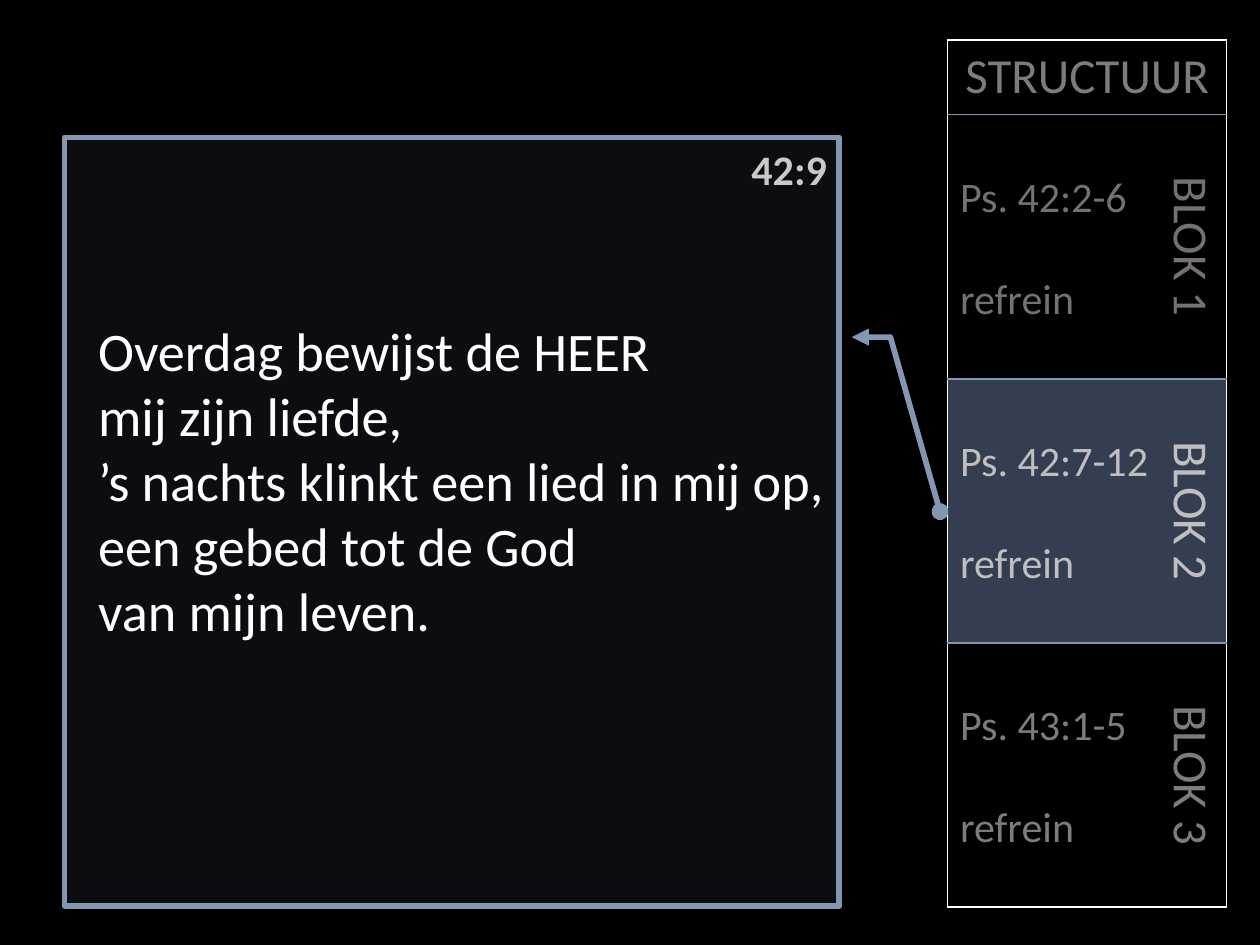
from lxml import etree
from pptx import Presentation
from pptx.dml.color import RGBColor
from pptx.enum.shapes import MSO_SHAPE
from pptx.enum.text import MSO_ANCHOR, MSO_AUTO_SIZE, PP_ALIGN
from pptx.oxml.ns import qn
from pptx.util import Cm, Pt

CALLOUT = MSO_SHAPE.LINE_CALLOUT_2
MIDDLE = MSO_ANCHOR.MIDDLE
GROW = MSO_AUTO_SIZE.SHAPE_TO_FIT_TEXT
LEFT, RIGHT, CENTER = PP_ALIGN.LEFT, PP_ALIGN.RIGHT, PP_ALIGN.CENTER

FONT = "Calibri"
BLUE, WHITE, BLACK = "8497B0", "FFFFFF", "000000"
BLOCKS = [
    ("Ps. 42:2-6", "BLOK 1", "767171", None),
    ("Ps. 42:7-12", "BLOK 2", "BFBFBF", "333F50"),
    ("Ps. 43:1-5", "BLOK 3", "7C7C7C", None),
]
VERSE = [
    "Overdag bewijst de HEER",
    "mij zijn liefde,",
    "’s nachts klinkt een lied in mij op,",
    "een gebed tot de God",
    "van mijn leven.",
]


def paint(fmt, color):
    """Give a fill a solid colour, or none."""
    if color is None:
        fmt.background()
    else:
        fmt.solid()
        fmt.fore_color.rgb = RGBColor.from_string(color)


def write(frame, lines, size, color, align=LEFT, bold=False, gap=0):
    """Write each line as a paragraph, with a gap between them."""
    for i, line in enumerate(lines):
        para = frame.add_paragraph() if i else frame.paragraphs[0]
        para.alignment = align
        if i and gap:
            para.space_before = Pt(gap)
        run = para.add_run()
        run.text = line
        run.font.name = FONT
        run.font.size = Pt(size)
        run.font.bold = bold
        paint(run.font.fill, color)


def edge(cell, **sides):
    """Draw the four borders of a cell; sides not named stay bare."""
    props = cell._tc.get_or_add_tcPr()
    for side in "LRTB":
        color = sides.get(side)
        line = etree.SubElement(props, qn(f"a:ln{side}"), w=str(Pt(1)))
        if color:
            fill = etree.SubElement(line, qn("a:solidFill"))
            etree.SubElement(fill, qn("a:srgbClr"), val=color)
        else:
            etree.SubElement(line, qn("a:noFill"))


def outline(slide, x, y, w, h):
    """Place the table that lists the blocks of the psalms."""
    head, side = 1.5, 1.13
    frame = slide.shapes.add_table(
        len(BLOCKS) + 1, 2, Cm(x), Cm(y), Cm(w), Cm(h))
    table = frame.table
    table.first_row = table.horz_banding = False
    table.columns[0].width, table.columns[1].width = Cm(w - side), Cm(side)
    for i, row in enumerate(table.rows):
        row.height = Cm((h - head) / len(BLOCKS) if i else head)

    title = table.cell(0, 0)
    title.merge(table.cell(0, 1))
    write(title.text_frame, ["STRUCTUUR"], 28, "7C7C7C", CENTER)
    edge(title, L=WHITE, R=WHITE, T=WHITE, B=BLUE)
    edge(table.cell(0, 1), R=WHITE, T=WHITE, B=BLUE)
    paint(title.fill, None)
    paint(table.cell(0, 1).fill, None)

    for i, (psalm, name, color, back) in enumerate(BLOCKS, 1):
        base = WHITE if i == len(BLOCKS) else BLUE
        part, block = table.cell(i, 0), table.cell(i, 1)
        part.margin_top = Cm(1.16)
        write(part.text_frame, [psalm, "refrein"], 24, color, gap=29.3)
        write(block.text_frame, [name], 28, color, CENTER)
        block.vertical_anchor = MIDDLE
        block._tc.get_or_add_tcPr().set("vert", "vert")
        edge(part, L=WHITE, T=BLUE, B=base)
        edge(block, R=WHITE, T=BLUE, B=base)
        paint(part.fill, back)
        paint(block.fill, back)


def label(slide, x, y, w, h, lines, size, color, **style):
    """Place a text box that grows with its text."""
    frame = slide.shapes.add_textbox(Cm(x), Cm(y), Cm(w), Cm(h)).text_frame
    frame.word_wrap = True
    frame.auto_size = GROW
    write(frame, lines, size, color, **style)


def panel(slide, x, y, w, h):
    """Place the callout with the verse and its number."""
    box = slide.shapes.add_shape(CALLOUT, Cm(x), Cm(y), Cm(w), Cm(h))
    box.shadow.inherit = False
    for i, value in enumerate([0.26, 1.016, 0.26, 1.066, 0.487, 1.13]):
        box.adjustments[i] = value
    paint(box.fill, "222A35")
    tint = box.fill._xPr.find(qn("a:solidFill"))[0]
    etree.SubElement(tint, qn("a:alpha"), val="33000")
    paint(box.line.fill, BLUE)
    box.line.width = Pt(3.25)
    line = box.line._get_or_add_ln()
    etree.SubElement(line, qn("a:headEnd"), type="triangle")
    etree.SubElement(line, qn("a:tailEnd"), type="oval")

    label(slide, x + 0.43, y + 3.5, w - 0.43, 6.88, VERSE, 31, WHITE)
    label(slide, x + w - 3, y, 3, 1.27, ["42:9"], 24, "C9C9C9",
          align=RIGHT, bold=True)


def main():
    """Build the slide and save it."""
    deck = Presentation()
    deck.slide_width, deck.slide_height = Cm(25.4), Cm(19.05)
    slide = deck.slides.add_slide(deck.slide_layouts[6])
    paint(slide.background.fill, BLACK)
    outline(slide, 19.1, 0.81, 5.63, 17.48)
    panel(slide, 1.3, 2.77, 15.62, 15.49)
    deck.save("out.pptx")


if __name__ == "__main__":
    main()
